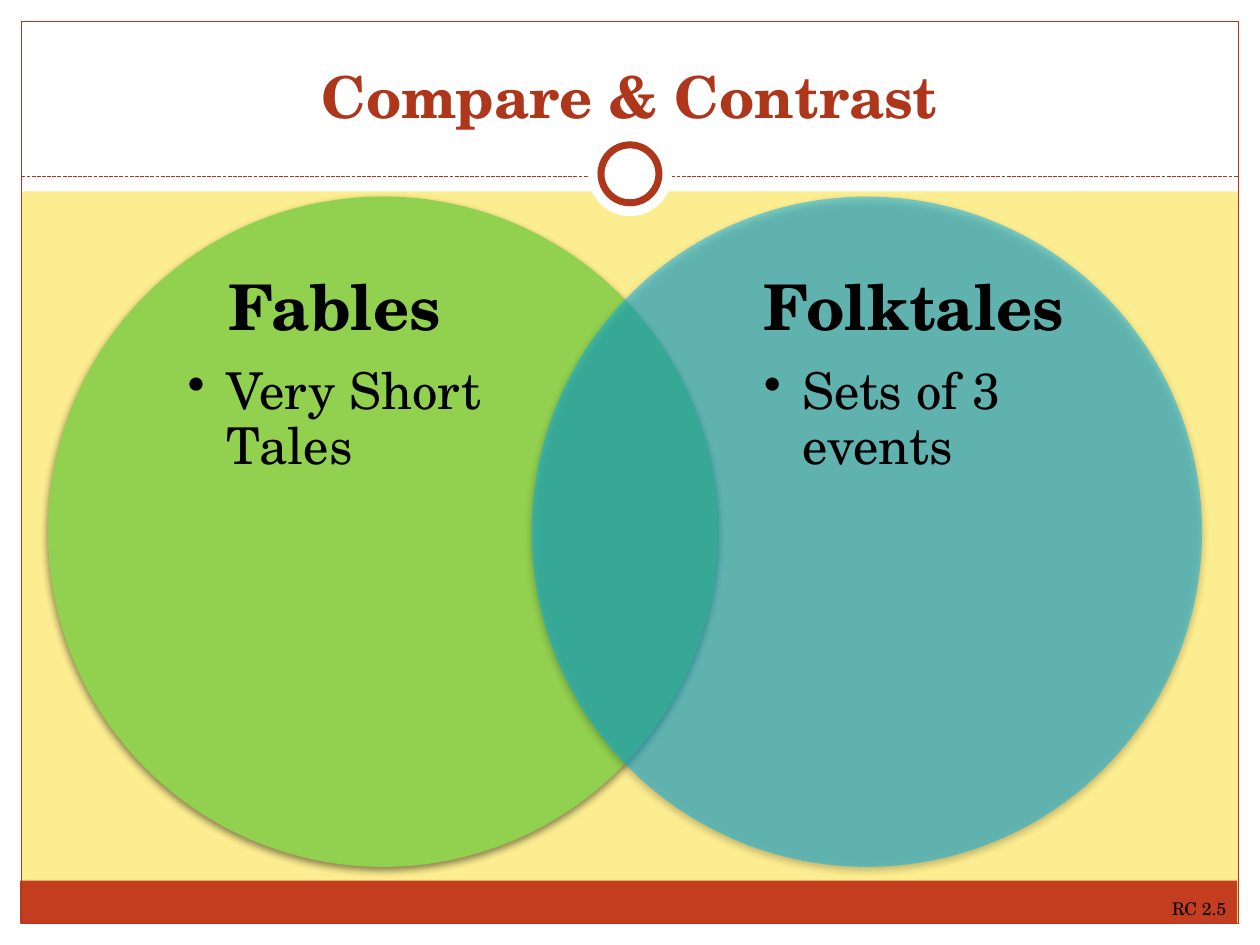
from dataclasses import dataclass

from lxml import etree
from pptx import Presentation, util as u
from pptx.dml.color import RGBColor
from pptx.enum import dml, shapes, text
from pptx.oxml import parse_xml
from pptx.oxml.ns import nsdecls, qn

# The slide is a square grid of 100 columns by 75 rows.
COLUMNS, ROWS = 100, 75
CELL = u.Inches(0.1)
MARGIN = 1.7
CENTER = COLUMNS / 2
HEADER_RULE = 14
RING_MIDDLE = 13.8

FONT = "TeX Gyre Schola"
WHITE = RGBColor(0xFF, 0xFF, 0xFF)
BLACK = RGBColor(0, 0, 0)
CREAM = RGBColor(0xFC, 0xED, 0x90)
BRICK = RGBColor(0xC4, 0x3D, 0x1F)
RUST = RGBColor(0xAD, 0x36, 0x1B)
GREEN = RGBColor(0x92, 0xD0, 0x50)
BLUE = RGBColor(0x00, 0xB0, 0xF0)


@dataclass(frozen=True)
class Box:
    left: float
    top: float
    width: float
    height: float

    def lengths(self) -> list[int]:
        return [round(side * CELL) for side in (self.left, self.top, self.width, self.height)]


@dataclass(frozen=True)
class VennSet:
    left: float
    text_left: float
    color: RGBColor
    opacity: int
    heading: str
    point: str


VENN_SETS = (
    VennSet(3.8, 11.2, GREEN, 100, "Fables", "Very Short Tales"),
    VennSet(42.2, 57.2, BLUE, 50, "Folktales", "Sets of 3 events"),
)
EDGES = (
    Box(0, ROWS - MARGIN, COLUMNS, MARGIN),
    Box(0, 0, COLUMNS, 15.2),
    Box(0, 0, MARGIN, ROWS),
    Box(COLUMNS - MARGIN, 0, MARGIN, ROWS),
)


def add_figure(slide, kind, box: Box, fill=None, line=None, weight: float = 0.75):
    shape = slide.shapes.add_shape(kind, *box.lengths())
    shape.shadow.inherit = False
    if fill is None:
        shape.fill.background()
    else:
        shape.fill.solid()
        shape.fill.fore_color.rgb = fill
    if line is None:
        shape.line.fill.background()
    else:
        shape.line.color.rgb = line
        shape.line.width = u.Pt(weight)
    return shape


def add_disc(slide, middle: float, diameter: float, line=None) -> None:
    """Draw a white disc centred across the slide."""
    box = Box(CENTER - diameter / 2, middle - diameter / 2, diameter, diameter)
    add_figure(slide, shapes.MSO_SHAPE.OVAL, box, WHITE, line, 4)


def add_text_frame(slide, box: Box, anchor=text.MSO_ANCHOR.TOP):
    frame = slide.shapes.add_textbox(*box.lengths()).text_frame
    frame.word_wrap = True
    frame.vertical_anchor = anchor
    return frame


def write(paragraph, words: str, size: float, alignment, color=BLACK, bold=False) -> None:
    paragraph.text = words
    paragraph.alignment = alignment
    font = paragraph.runs[0].font
    font.name, font.size, font.bold = FONT, u.Pt(size), bold
    font.color.rgb = color


def add_bullet(paragraph, indent: int) -> None:
    properties = paragraph._p.get_or_add_pPr()
    properties.set("marL", str(indent))
    properties.set("indent", str(-indent))
    etree.SubElement(properties, qn("a:buChar")).set("char", "•")


def add_soft_shadow(shape) -> None:
    effects = shape.element.spPr.find(qn("a:effectLst"))
    effects.append(parse_xml(
        f'<a:outerShdw {nsdecls("a")} blurRad="{u.Pt(4)}" dist="{u.Pt(2)}" dir="5400000" '
        'rotWithShape="0"><a:srgbClr val="000000"><a:alpha val="45000"/></a:srgbClr></a:outerShdw>'
    ))


def add_venn_set(slide, venn_set: VennSet) -> None:
    circle = add_figure(slide, shapes.MSO_SHAPE.OVAL,
                        Box(venn_set.left, 15.6, 53.2, 53.2), venn_set.color)
    if venn_set.opacity < 100:
        color = circle.element.spPr.find(f"{qn('a:solidFill')}/{qn('a:srgbClr')}")
        etree.SubElement(color, qn("a:alpha")).set("val", str(venn_set.opacity * 1000))
    add_soft_shadow(circle)

    frame = add_text_frame(slide, Box(venn_set.text_left, 21.9, 30.7, 40.6))
    frame.margin_left = frame.margin_right = frame.margin_top = frame.margin_bottom = 0
    # Centre the text block as a whole; the bullet stays left-aligned within it.
    frame._txBody.bodyPr.set("anchorCtr", "1")
    heading, point = frame.paragraphs[0], frame.add_paragraph()
    write(heading, venn_set.heading, 36, text.PP_ALIGN.CENTER, bold=True)
    write(point, venn_set.point, 29, text.PP_ALIGN.LEFT)
    for paragraph, share in ((heading, 0.35), (point, 0.15)):
        paragraph.line_spacing = 0.9
        paragraph.space_after = u.Pt(share * paragraph.runs[0].font.size.pt)
    point.level = 1
    add_bullet(point, u.Inches(0.31))


def add_header_rule(slide) -> None:
    start, end = round(MARGIN * CELL), round((COLUMNS - MARGIN) * CELL)
    height = HEADER_RULE * CELL
    rule = slide.shapes.add_connector(shapes.MSO_CONNECTOR.STRAIGHT, start, height, end, height)
    rule.line.color.rgb = RUST
    rule.line.width = u.Pt(0.75)
    rule.line.dash_style = dml.MSO_LINE.SQUARE_DOT
    etree.SubElement(rule.element.spPr, qn("a:effectLst"))


def add_frame(slide) -> None:
    rectangle = shapes.MSO_SHAPE.RECTANGLE
    inner_width = COLUMNS - 2 * MARGIN
    for edge in EDGES:
        add_figure(slide, rectangle, edge, WHITE)
    add_figure(slide, rectangle, Box(1.6, 69.9, inner_width, 3.4), BRICK)
    add_figure(slide, rectangle, Box(MARGIN, MARGIN, inner_width, ROWS - 2 * MARGIN), line=RUST)
    add_header_rule(slide)
    add_disc(slide, RING_MIDDLE, 6.7)
    add_disc(slide, RING_MIDDLE, 4.6, RUST)


def main() -> None:
    presentation = Presentation()
    presentation.slide_width, presentation.slide_height = COLUMNS * CELL, ROWS * CELL
    slide = presentation.slides.add_slide(presentation.slide_layouts[6])
    slide.background.fill.solid()
    slide.background.fill.fore_color.rgb = CREAM

    add_frame(slide)
    title = add_text_frame(slide, Box(3.3, 2.5, 93.3, 8.3), text.MSO_ANCHOR.BOTTOM)
    write(title.paragraphs[0], "Compare & Contrast", 33, text.PP_ALIGN.CENTER, RUST, True)
    for venn_set in VENN_SETS:
        add_venn_set(slide, venn_set)
    standard = add_text_frame(slide, Box(80.8, 70.8, 17.5, 2.7))
    write(standard.paragraphs[0], "RC 2.5", 10, text.PP_ALIGN.RIGHT)

    presentation.save("out.pptx")


if __name__ == "__main__":
    main()
